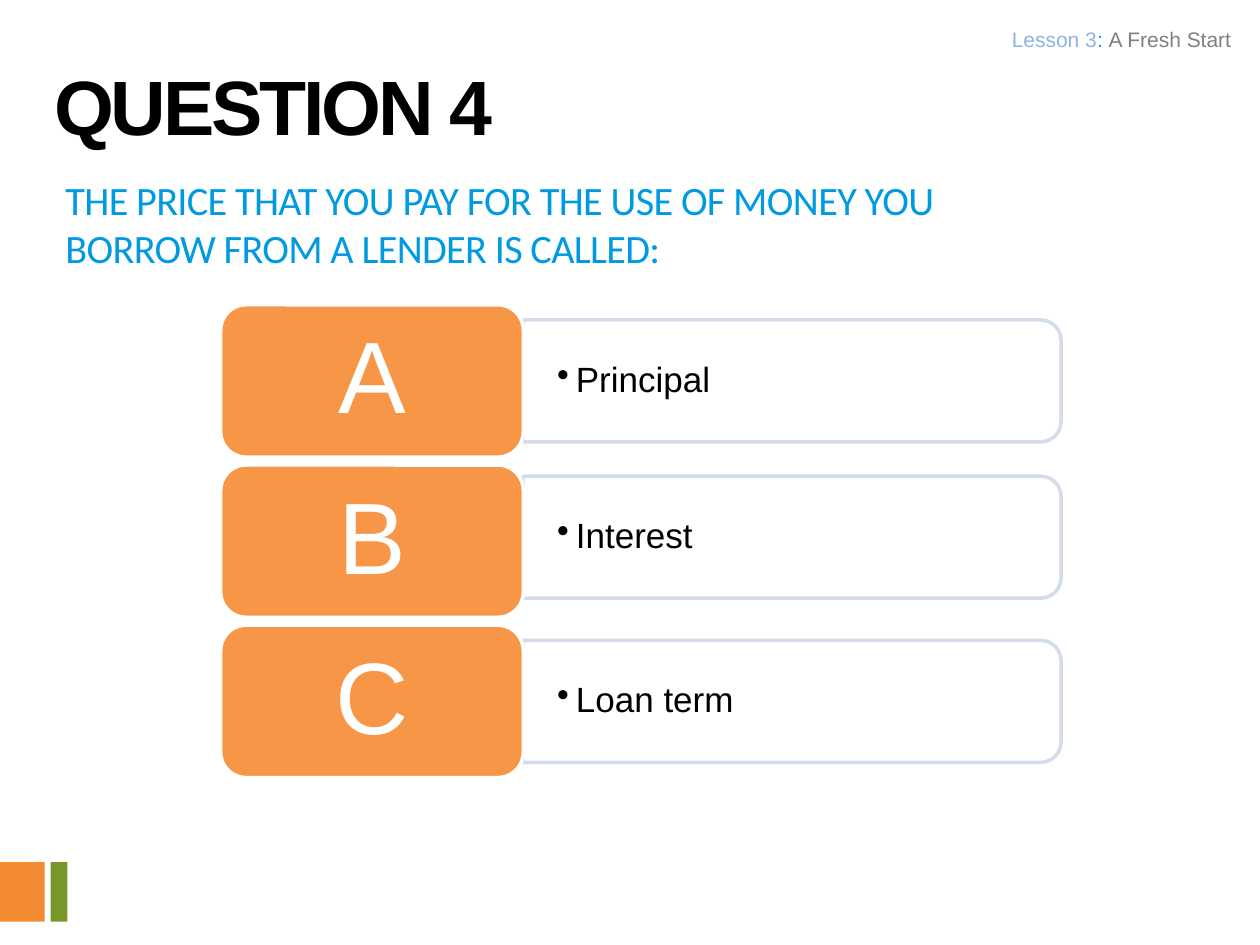
from dataclasses import dataclass

from lxml import etree
from pptx import Presentation
from pptx.dml.color import RGBColor
from pptx.enum import shapes, text
from pptx.oxml import ns
from pptx.util import Cm, Pt

COLORS = {
    "white": "FFFFFF", "black": "000000", "gray": "808080",
    "question": "009AE1", "lesson": "8EB4E3",
    "label": "F79646", "bar_line": "D0D8E8",
    "orange_block": "F38A31", "green_block": "77972B",
}
LABEL_LEFT, LABEL_WIDTH, LABEL_HEIGHT = 4.45, 6.1, 3.07
BAR_LEFT, BAR_WIDTH, BAR_HEIGHT = 10.54, 10.85, 2.46
FIRST_CENTER, ROW_STEP = 7.68, 3.23


@dataclass
class Answer:
    letter: str
    wording: str
    bar_shift: float = 0


@dataclass
class Piece:
    wording: str
    color: str


ANSWERS = [Answer("A", "Principal"), Answer("B", "Interest", -0.08), Answer("C", "Loan term")]


def rgb(name: str) -> RGBColor:
    return RGBColor.from_string(COLORS[name])


def style_run(run, size: float, color: str, font: str = "Arial", spacing: float = 0) -> None:
    run.font.size, run.font.name = Pt(size), font
    run.font.color.rgb = rgb(color)
    if spacing:
        run.font._element.set("spc", str(round(spacing * 100)))


def set_insets(frame, side: float, top: float) -> None:
    frame.margin_left = frame.margin_right = Cm(side)
    frame.margin_top = frame.margin_bottom = Cm(top)


def add_text(slide, left: float, top: float, width: float, height: float,
             side: float = 0.25, inset_top: float = 0.13):
    frame = slide.shapes.add_textbox(Cm(left), Cm(top), Cm(width), Cm(height)).text_frame
    frame.word_wrap = True
    set_insets(frame, side, inset_top)
    return frame


def add_block(slide, kind, left: float, top: float, width: float, height: float,
              fill: str, line: str = ""):
    block = slide.shapes.add_shape(kind, Cm(left), Cm(top), Cm(width), Cm(height))
    block.shadow.inherit = False
    block.fill.solid()
    block.fill.fore_color.rgb = rgb(fill)
    if line:
        block.line.color.rgb = rgb(line)
        block.line.width = Pt(2)
    else:
        block.line.fill.background()
    return block


def add_bullet(paragraph, indent: float) -> None:
    properties = paragraph._p.get_or_add_pPr()
    properties.set("marL", str(Cm(indent)))
    properties.set("indent", str(-Cm(indent)))
    etree.SubElement(properties, ns.qn("a:buChar")).set("char", "•")


def add_answer_bar(slide, answer: Answer, center: float) -> None:
    """Draw the bar upright, then turn it so that its rounded end faces right."""
    bar = add_block(slide, shapes.MSO_SHAPE.ROUND_2_SAME_RECTANGLE,
                    BAR_LEFT + (BAR_WIDTH - BAR_HEIGHT) / 2, center - BAR_WIDTH / 2,
                    BAR_HEIGHT, BAR_WIDTH, "white", "bar_line")
    bar.rotation = 90
    for color in bar._element.spPr.iter(ns.qn("a:srgbClr")):
        etree.SubElement(color, ns.qn("a:alpha")).set("val", "90000")

    frame = add_text(slide, BAR_LEFT, center - 1.1, 10.72, 2.2, 0.69, 0.36)
    frame.vertical_anchor = text.MSO_ANCHOR.MIDDLE
    frame.text = answer.wording
    paragraph = frame.paragraphs[0]
    paragraph.line_spacing = 0.9
    add_bullet(paragraph, 0.38)
    style_run(paragraph.runs[0], 20, "black")


def add_letter(slide, letter: str, center: float) -> None:
    label = add_block(slide, shapes.MSO_SHAPE.ROUNDED_RECTANGLE, LABEL_LEFT,
                      center - LABEL_HEIGHT / 2, LABEL_WIDTH, LABEL_HEIGHT, "label", "white")
    frame = label.text_frame
    set_insets(frame, 0.6, 0.3)
    frame.vertical_anchor = text.MSO_ANCHOR.MIDDLE
    frame.text = letter
    paragraph = frame.paragraphs[0]
    paragraph.alignment = text.PP_ALIGN.CENTER
    paragraph.line_spacing = 0.9
    style_run(paragraph.runs[0], 58, "white")


def add_lesson_header(slide) -> None:
    header = add_text(slide, 10.16, 0.43, 14.86, 0.81, 0.2, 0.1).paragraphs[0]
    header.alignment = text.PP_ALIGN.RIGHT
    for piece in (Piece("Lesson 3", "lesson"), Piece(": ", "question"),
                  Piece("A Fresh Start", "gray")):
        run = header.add_run()
        run.text = piece.wording
        style_run(run, 12, piece.color)


def main() -> None:
    deck = Presentation()
    deck.slide_width, deck.slide_height = Cm(25.4), Cm(19.05)
    slide = deck.slides.add_slide(deck.slide_layouts[6])

    rectangle = shapes.MSO_SHAPE.RECTANGLE
    add_block(slide, rectangle, 0, 17.38, 0.9, 1.2, "orange_block")
    add_block(slide, rectangle, 1.02, 17.38, 0.34, 1.2, "green_block")

    question = add_text(slide, 1.07, 3.4, 21, 3.18)
    question.text = ("THE PRICE THAT YOU PAY FOR THE USE OF MONEY YOU "
                     "BORROW FROM A LENDER IS CALLED:")
    style_run(question.paragraphs[0].runs[0], 23, "question", "Calibri", -0.4)

    for row, answer in enumerate(ANSWERS):
        center = FIRST_CENTER + row * ROW_STEP
        add_answer_bar(slide, answer, center + answer.bar_shift)
        add_letter(slide, answer.letter, center)

    add_lesson_header(slide)

    title = add_text(slide, 0.84, 0.84, 22, 2.11)
    title.text = "QUESTION 4"
    title.paragraphs[0].line_spacing = Pt(59)
    heading = title.paragraphs[0].runs[0]
    style_run(heading, 44, "black", spacing=-1.8)
    heading.font.bold = True

    deck.save("out.pptx")


if __name__ == "__main__":
    main()
